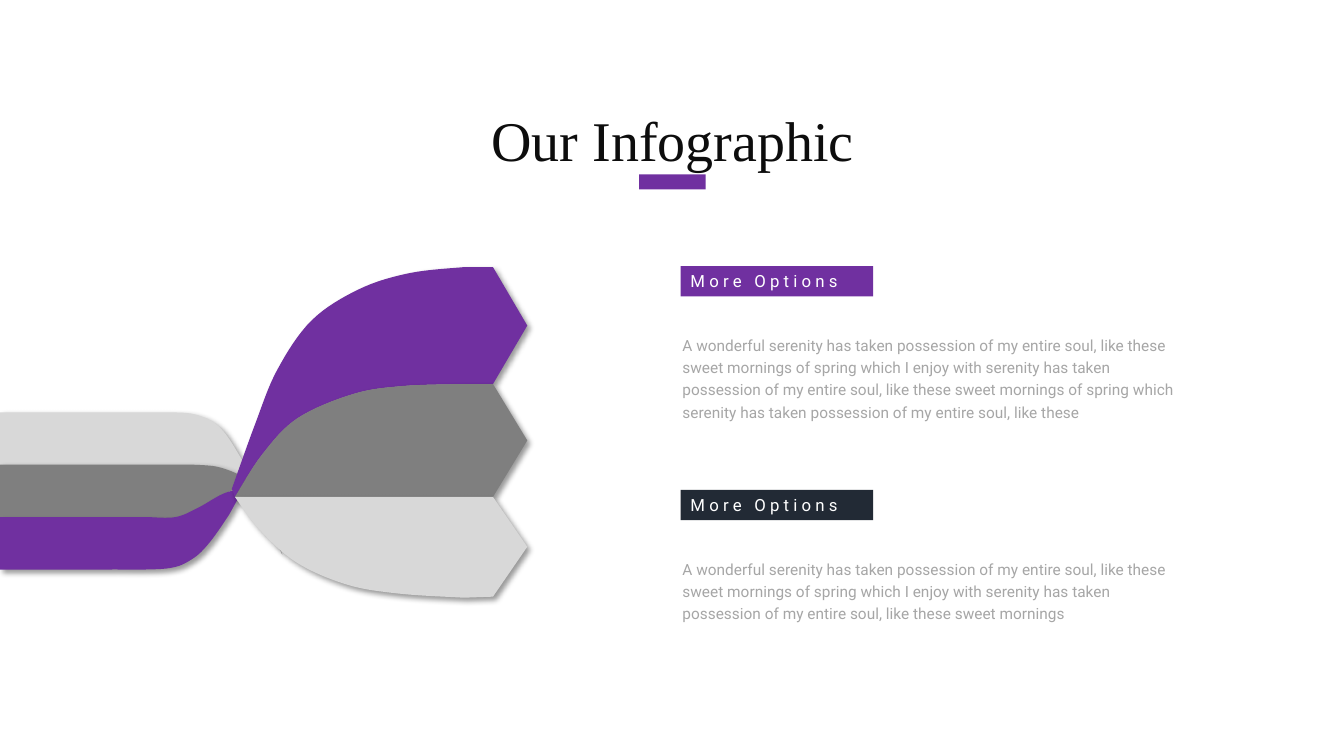
from dataclasses import dataclass

from lxml.etree import SubElement
from pptx import Presentation
from pptx.dml.color import RGBColor
from pptx.enum.shapes import MSO_SHAPE
from pptx.enum.text import MSO_ANCHOR, MSO_AUTO_SIZE, PP_ALIGN
from pptx.oxml.ns import qn
from pptx.shapes.autoshape import Shape
from pptx.slide import Slide
from pptx.util import Inches, Pt

Point = tuple[float, float]

COLORS = {
    "purple": "7030A0",
    "gray": "7F7F7F",
    "silver": "D8D8D8",
    "navy": "222A35",
    "body": "A6A6A6",
    "title": "0D0D0D",
    "white": "FFFFFF",
}


@dataclass
class Ribbon:
    color: str
    outline: list[Point]


@dataclass
class Option:
    top: float
    color: str
    body_height: float
    body: str


@dataclass
class Style:
    font: str
    size: int
    color: str
    line_spacing: float = 1.0
    align: PP_ALIGN = PP_ALIGN.LEFT
    tracking: int = 0


TITLE = Style("Times New Roman", 40, "title", 1.5, PP_ALIGN.CENTER)
BODY = Style("Roboto", 11, "body", 1.2)
LABEL = Style("Roboto", 12, "white", tracking=300)

OPENING = (
    "A wonderful serenity has taken possession of my entire soul, like these sweet mornings "
    "of spring which I enjoy with serenity has taken possession of my entire soul, "
    "like these sweet mornings"
)
OPTIONS = [
    Option(2.64, "purple", 0.97, OPENING + " of spring which serenity has taken possession "
           "of my entire soul, like these"),
    Option(4.86, "navy", 0.75, OPENING),
]


def curve(*knots: Point, steps: int = 8) -> list[Point]:
    padded = [knots[0], *knots, knots[-1]]
    points = []
    for before, start, end, after in zip(padded, padded[1:], padded[2:], padded[3:]):
        for step in range(steps):
            t = step / steps
            x, y = (
                b + (c - a) * t / 2
                + (2 * a - 5 * b + 4 * c - d) * t ** 2 / 2
                + (3 * b - a - 3 * c + d) * t ** 3 / 2
                for a, b, c, d in zip(before, start, end, after)
            )
            points.append((x, y))
    return points + [knots[-1]]


def arrow_head(top: float, bottom: float) -> list[Point]:
    return [(4.89, top), (5.23, (top + bottom) / 2), (4.89, bottom)]


def ribbons() -> list[Ribbon]:
    twist = (2.33, 4.93)
    upper = curve((2.3, 4.85), (2.53, 4.21), (2.75, 3.67), (3.09, 3.18),
                  (3.56, 2.87), (4.06, 2.71), (4.6, 2.65))
    middle = curve(twist, (2.6, 4.51), (2.95, 4.15), (3.5, 3.91), (3.99, 3.83), (4.59, 3.81))
    lower = curve(twist, (2.57, 5.25), (2.94, 5.58), (3.44, 5.8), (3.96, 5.89), (4.6, 5.93))
    silver_tail = (
        curve((1.64, 4.09), (1.93, 4.11), (2.17, 4.23), (2.37, 4.51), (2.59, 4.93), (2.8, 5.5))
        + curve((2.55, 4.92), (2.45, 4.77), (2.21, 4.68), (1.73, 4.63)))
    gray_tail = (
        curve((1.91, 4.61), (2.15, 4.63), (2.37, 4.71), (2.49, 4.81), (2.64, 5.1), (2.8, 5.5))
        + curve((2.61, 5.1), (2.46, 4.86), (2.37, 4.84), (2.19, 4.92), (1.95, 5.08),
                (1.68, 5.16), (1.4, 5.17)))
    purple_tail = (
        curve((1.47, 5.13), (1.74, 5.13), (1.96, 5.04), (2.21, 4.9), (2.42, 4.84))
        + curve((2.27, 5.11), (2.08, 5.38), (1.9, 5.55), (1.65, 5.64), (1.09, 5.65)))
    return [
        Ribbon("silver", [(0, 4.66), (0, 4.09)] + silver_tail),
        Ribbon("gray", [(0, 5.15), (0, 4.61)] + gray_tail),
        Ribbon("purple", [(0, 5.65), (0, 5.13)] + purple_tail),
        Ribbon("purple", upper + arrow_head(2.65, 3.81) + middle[::-1]),
        Ribbon("gray", middle + arrow_head(3.81, 4.93)),
        Ribbon("silver", [twist] + arrow_head(4.93, 5.92) + lower[::-1]),
    ]


def paint(shape: Shape, color: str) -> None:
    shape.shadow.inherit = False
    shape.fill.solid()
    shape.fill.fore_color.rgb = RGBColor.from_string(COLORS[color])
    shape.line.fill.background()


def write(shape: Shape, text: str, style: Style) -> None:
    frame = shape.text_frame
    frame.text = text
    frame.word_wrap = True
    frame.auto_size = MSO_AUTO_SIZE.SHAPE_TO_FIT_TEXT
    paragraph = frame.paragraphs[0]
    paragraph.alignment = style.align
    paragraph.line_spacing = style.line_spacing
    span = paragraph.runs[0]
    span.font.name = style.font
    span.font.size = Pt(style.size)
    span.font.color.rgb = RGBColor.from_string(COLORS[style.color])
    if style.tracking:
        span.font._element.set("spc", str(style.tracking))


def add_bar(page: Slide, left: float, top: float, width: float, height: float,
            color: str) -> Shape:
    bar = page.shapes.add_shape(MSO_SHAPE.RECTANGLE, Inches(left), Inches(top),
                                Inches(width), Inches(height))
    paint(bar, color)
    return bar


def add_text(page: Slide, left: float, top: float, width: float, height: float,
             text: str, style: Style) -> None:
    box = page.shapes.add_textbox(Inches(left), Inches(top), Inches(width), Inches(height))
    write(box, text, style)


def add_ribbon(page: Slide, ribbon: Ribbon) -> None:
    start, *rest = [(Inches(x), Inches(y)) for x, y in ribbon.outline]
    builder = page.shapes.build_freeform(*start)
    builder.add_line_segments(rest, close=True)
    shape = builder.convert_to_shape()
    paint(shape, ribbon.color)
    effects = shape._element.spPr.find(qn("a:effectLst"))
    shadow = SubElement(effects, qn("a:outerShdw"), blurRad=str(Pt(4)), dist=str(Pt(3)),
                        dir="2700000", algn="tl", rotWithShape="0")
    tint = SubElement(shadow, qn("a:srgbClr"), val="000000")
    SubElement(tint, qn("a:alpha"), val="40000")


def add_option(page: Slide, option: Option) -> None:
    add_text(page, 6.67, option.top + 0.61, 5.19, option.body_height, option.body, BODY)
    label = add_bar(page, 6.75, option.top, 1.91, 0.3, option.color)
    write(label, "More Options", LABEL)
    label.text_frame.vertical_anchor = MSO_ANCHOR.MIDDLE


def main() -> None:
    deck = Presentation()
    deck.slide_width = Inches(13.33)
    deck.slide_height = Inches(7.5)
    page = deck.slides.add_slide(deck.slide_layouts[6])
    for ribbon in ribbons():
        add_ribbon(page, ribbon)
    for option in OPTIONS:
        add_option(page, option)
    add_text(page, 3.54, 0.66, 6.26, 0.99, "Our Infographic", TITLE)
    add_bar(page, 6.34, 1.73, 0.66, 0.15, "purple")
    deck.save("out.pptx")


if __name__ == "__main__":
    main()
